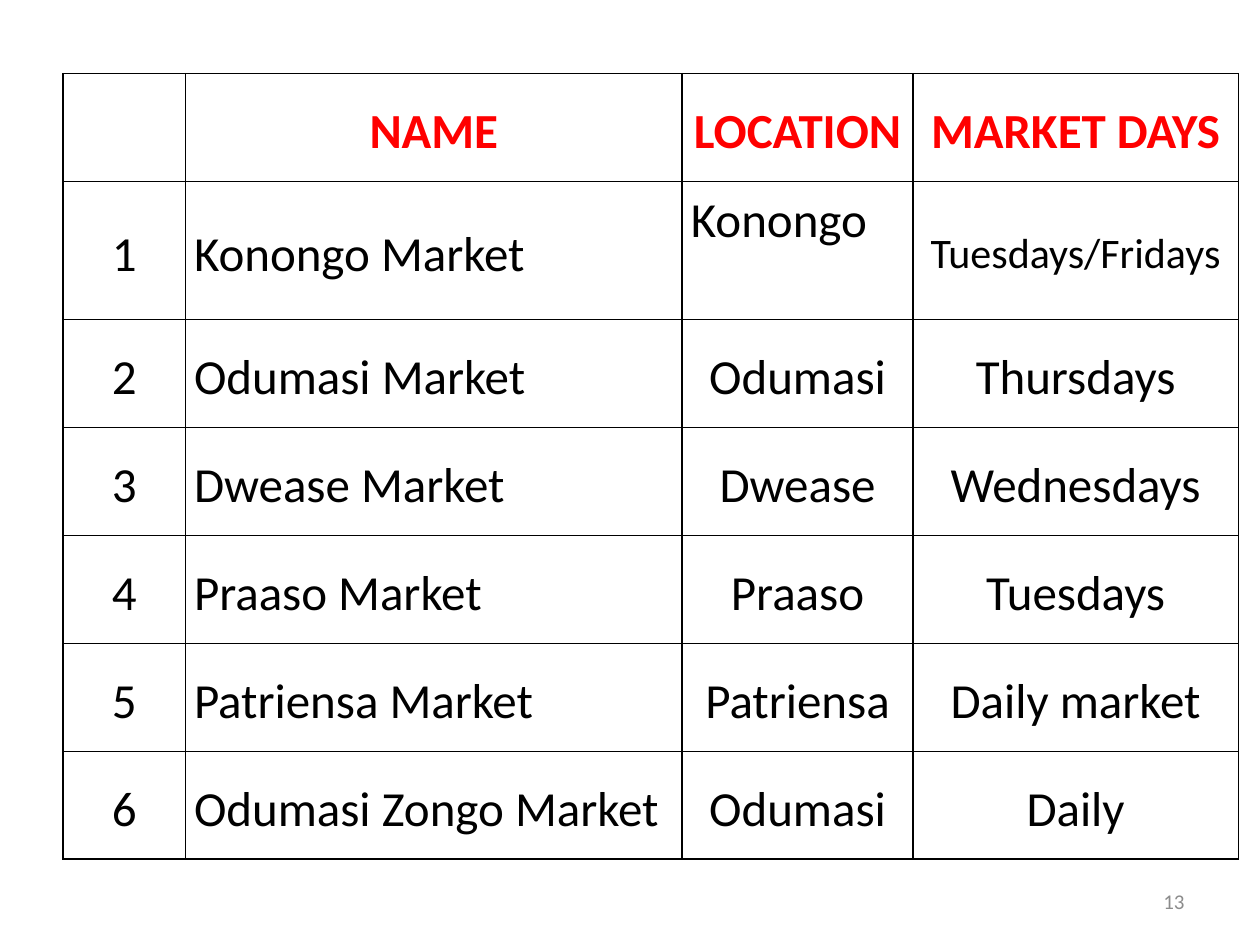
from dataclasses import dataclass

from lxml.etree import SubElement
from pptx import Presentation
from pptx.dml.color import RGBColor
from pptx.enum.text import MSO_ANCHOR, PP_ALIGN
from pptx.oxml.ns import qn
from pptx.util import Pt

FONT = "Calibri"
BLACK, RED, GREY = "000000", "FF0000", "8C8C8C"
COLUMN_WIDTHS = (69.9, 284, 131.8, 186)
ROW_HEIGHT, FIRST_MARKET_HEIGHT = 61.7, 78.9
HEADINGS = ("", "NAME", "LOCATION", "MARKET DAYS")


@dataclass(frozen=True)
class Market:
    name: str
    location: str
    days: str


@dataclass(frozen=True)
class TextStyle:
    size: float = 28
    color: str = BLACK
    bold: bool = False
    align: PP_ALIGN = PP_ALIGN.CENTER
    anchor: MSO_ANCHOR = MSO_ANCHOR.MIDDLE
    line_spacing: float = 1.15


HEADING = TextStyle(color=RED, bold=True)
CENTERED = TextStyle()
NAME = TextStyle(align=PP_ALIGN.LEFT)
TOP_LEFT = TextStyle(align=PP_ALIGN.LEFT, anchor=MSO_ANCHOR.TOP)
SMALL = TextStyle(size=24)
PAGE_NUMBER = TextStyle(size=12, color=GREY, align=PP_ALIGN.RIGHT, line_spacing=1)

MARKETS = (
    Market("Konongo Market", "Konongo", "Tuesdays/Fridays"),
    Market("Odumasi Market", "Odumasi", "Thursdays"),
    Market("Dwease Market", "Dwease", "Wednesdays"),
    Market("Praaso Market", "Praaso", "Tuesdays"),
    Market("Patriensa Market", "Patriensa", "Daily market"),
    Market("Odumasi Zongo Market", "Odumasi", "Daily"),
)


def rgb(color: str) -> RGBColor:
    """Turn a hex string into a colour."""
    return RGBColor.from_string(color)


def write_text(text_frame, text: str, style: TextStyle) -> None:
    """Write one styled paragraph."""
    paragraph = text_frame.paragraphs[0]
    paragraph.alignment = style.align
    paragraph.line_spacing = style.line_spacing
    run = paragraph.add_run()
    run.text = text
    run.font.name = FONT
    run.font.size = Pt(style.size)
    run.font.bold = style.bold
    run.font.color.rgb = rgb(style.color)


def add_borders(cell, color: str, width: float) -> None:
    """Draw a solid line on each side of a cell."""
    properties = cell._tc.get_or_add_tcPr()
    for side in ("a:lnL", "a:lnR", "a:lnT", "a:lnB"):
        line = SubElement(properties, qn(side), w=str(Pt(width)))
        fill = SubElement(line, qn("a:solidFill"))
        SubElement(fill, qn("a:srgbClr"), val=color)


def fill_cell(cell, text: str, style: TextStyle) -> None:
    """Set the borders, margins and text of a cell."""
    add_borders(cell, BLACK, 1)
    cell.fill.background()
    cell.margin_left = cell.margin_right = Pt(5)
    cell.margin_top = cell.margin_bottom = Pt(0)
    cell.vertical_anchor = style.anchor
    if text:
        write_text(cell.text_frame, text, style)


def add_market_table(slide) -> None:
    """Add the table of markets and their days."""
    row_heights = [ROW_HEIGHT] * (len(MARKETS) + 1)
    row_heights[1] = FIRST_MARKET_HEIGHT
    table = slide.shapes.add_table(
        len(row_heights), len(COLUMN_WIDTHS), Pt(36), Pt(42),
        Pt(sum(COLUMN_WIDTHS)), Pt(sum(row_heights)),
    ).table
    table.first_row = table.horz_banding = False
    for column, width in zip(table.columns, COLUMN_WIDTHS):
        column.width = Pt(width)
    for row, height in zip(table.rows, row_heights):
        row.height = Pt(height)
    for cell, heading in zip(table.rows[0].cells, HEADINGS):
        fill_cell(cell, heading, HEADING)
    for number, market in enumerate(MARKETS, start=1):
        texts = (str(number), market.name, market.location, market.days)
        styles = (
            (CENTERED, NAME, TOP_LEFT, SMALL) if number == 1
            else (CENTERED, NAME, CENTERED, CENTERED)
        )
        for cell, text, style in zip(table.rows[number].cells, texts, styles):
            fill_cell(cell, text, style)


def add_page_number(slide, number: int) -> None:
    """Add the page number at the bottom right."""
    text_frame = slide.shapes.add_textbox(Pt(516), Pt(500.5), Pt(168), Pt(28.8)).text_frame
    text_frame.word_wrap = True
    text_frame.vertical_anchor = PAGE_NUMBER.anchor
    write_text(text_frame, str(number), PAGE_NUMBER)


def main() -> None:
    """Build and save the slide."""
    presentation = Presentation()
    presentation.slide_width, presentation.slide_height = Pt(720), Pt(540)
    slide = presentation.slides.add_slide(presentation.slide_layouts[6])
    add_market_table(slide)
    add_page_number(slide, 13)
    presentation.save("out.pptx")


if __name__ == "__main__":
    main()
